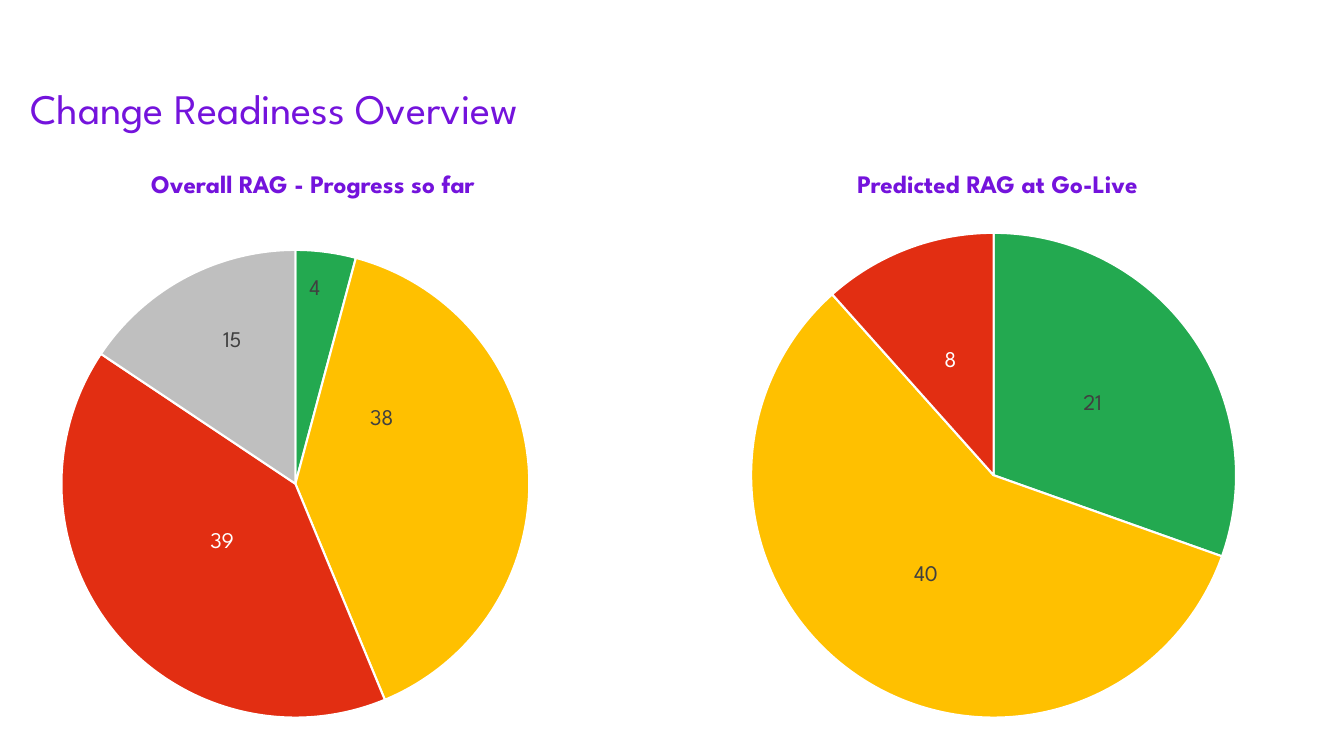
from lxml.etree import SubElement
from pptx import Presentation
from pptx.chart.data import CategoryChartData
from pptx.dml.color import RGBColor
from pptx.enum.chart import XL_CHART_TYPE as ChartType, XL_LABEL_POSITION as LabelPosition
from pptx.enum.text import MSO_ANCHOR as Anchor, PP_ALIGN as Align
from pptx.oxml import parse_xml
from pptx.oxml.ns import nsdecls, qn
from pptx.util import Inches, Pt

FONT = "League Spartan"
PURPLE = RGBColor(0x74, 0x13, 0xDC)
GREEN = RGBColor(0x23, 0xA9, 0x50)
AMBER = RGBColor(0xFF, 0xC0, 0x00)
RED = RGBColor(0xE2, 0x2E, 0x12)
GREY = RGBColor(0xBF, 0xBF, 0xBF)
DARK = RGBColor(0x40, 0x40, 0x40)
WHITE = RGBColor(0xFF, 0xFF, 0xFF)


def set_font(font, size, color, bold=False):
    """Apply the deck's typeface with a size and colour."""
    font.name = FONT
    font.size = Pt(size)
    font.bold = bold
    font.color.rgb = color


def write_text(shape, text, size, color=PURPLE, bold=False, align=Align.LEFT, indent=0):
    """Write one formatted paragraph at the top of a shape."""
    frame = shape.text_frame
    frame.word_wrap = True
    frame.vertical_anchor = Anchor.TOP
    para = frame.paragraphs[0]
    para.alignment = align
    para.space_before = Pt(0)
    para.line_spacing = 1.0
    if indent:
        properties = para._p.get_or_add_pPr()
        properties.set("marL", str(Inches(indent)))
        properties.set("indent", "0")
    span = para.add_run()
    span.text = text
    set_font(span.font, size, color, bold)


def add_title(page, text):
    """Place the page title."""
    title = page.shapes.title
    title.left, title.top = Inches(0.3), Inches(0.82)
    title.width, title.height = Inches(7.8), Inches(0.5)
    frame = title.text_frame
    frame.margin_left = frame.margin_right = frame.margin_top = frame.margin_bottom = 0
    write_text(title, text, 30)


def add_heading(page, text, left):
    """Add a centred heading above a pie."""
    box = page.shapes.add_textbox(Inches(left), Inches(1.62), Inches(5.88), Inches(0.4))
    write_text(box, text, 18, bold=True, align=Align.CENTER, indent=0.07)


def place_plot(chart, frame, plot):
    """Fix the pie's square inside its chart frame, both given in inches."""
    left, top, width, height = frame
    plot_left, plot_top, size = plot
    values = {"x": (plot_left - left) / width, "y": (plot_top - top) / height,
              "w": size / width, "h": size / height}
    layout = parse_xml(f"<c:layout {nsdecls('c')}><c:manualLayout/></c:layout>")
    manual = layout[0]
    SubElement(manual, qn("c:layoutTarget"), val="inner")
    for axis in "xy":
        SubElement(manual, qn(f"c:{axis}Mode"), val="edge")
    for key, value in values.items():
        SubElement(manual, qn(f"c:{key}"), val=f"{value:.4f}")
    area = chart._chartSpace.chart.plotArea
    for old in area.findall(qn("c:layout")):
        area.remove(old)
    area.insert(0, layout)


def shift_label(label, frame, shift):
    """Move a data label by inches from its default place."""
    layout = parse_xml(f"<c:layout {nsdecls('c')}><c:manualLayout/></c:layout>")
    for axis, offset, extent in zip("xy", shift, frame[2:]):
        SubElement(layout[0], qn(f"c:{axis}"), val=f"{offset / extent:.4f}")
    label._dLbl.insert(1, layout)


def add_pie(page, frame, plot, slices):
    """Add a pie whose slices are (value, colour, label shift)."""
    data = CategoryChartData()
    data.categories = [str(number) for number in range(1, len(slices) + 1)]
    data.add_series("Series 1", [value for value, _, _ in slices])
    lengths = [Inches(length) for length in frame]
    chart = page.shapes.add_chart(ChartType.PIE, *lengths, data).chart
    chart.has_title = False
    chart.has_legend = False
    set_font(chart.font, 16, DARK)
    place_plot(chart, frame, plot)
    pie = chart.plots[0]
    pie.vary_by_categories = True
    series = pie.series[0]
    labels = series.data_labels
    labels.show_value = True
    labels.position = LabelPosition.CENTER
    set_font(labels.font, 16, DARK)
    for index, (_, color, shift) in enumerate(slices):
        point = series.points[index]
        point.format.fill.solid()
        point.format.fill.fore_color.rgb = color
        point.format.line.color.rgb = WHITE
        point.format.line.width = Pt(1.5)
        label = point.data_label
        set_font(label.font, 16, WHITE if color == RED else DARK)
        label.position = LabelPosition.CENTER
        if shift:
            shift_label(label, frame, shift)


def main():
    """Build and save the readiness page."""
    deck = Presentation()
    deck.slide_width, deck.slide_height = Inches(13.33), Inches(7.5)
    page = deck.slides.add_slide(deck.slide_layouts[5])
    add_title(page, "Change Readiness Overview")
    add_heading(page, "Overall RAG - Progress so far", 0.13)
    add_pie(page, (-1.39, 2.08, 8.91, 5.19), (0.61, 2.48, 4.64), [
        (4, GREEN, (0.04, -0.77)),
        (38, AMBER, (-0.3, -0.55)),
        (39, RED, (0.17, -0.15)),
        (15, GREY, (-0.08, -0.38)),
    ])
    add_heading(page, "Predicted RAG at Go-Live", 6.92)
    add_pie(page, (5.4, 2.17, 8.91, 5.1), (7.45, 2.31, 4.81), [
        (21, GREEN, None),
        (40, AMBER, None),
        (8, RED, None),
    ])
    deck.save("out.pptx")


if __name__ == "__main__":
    main()
